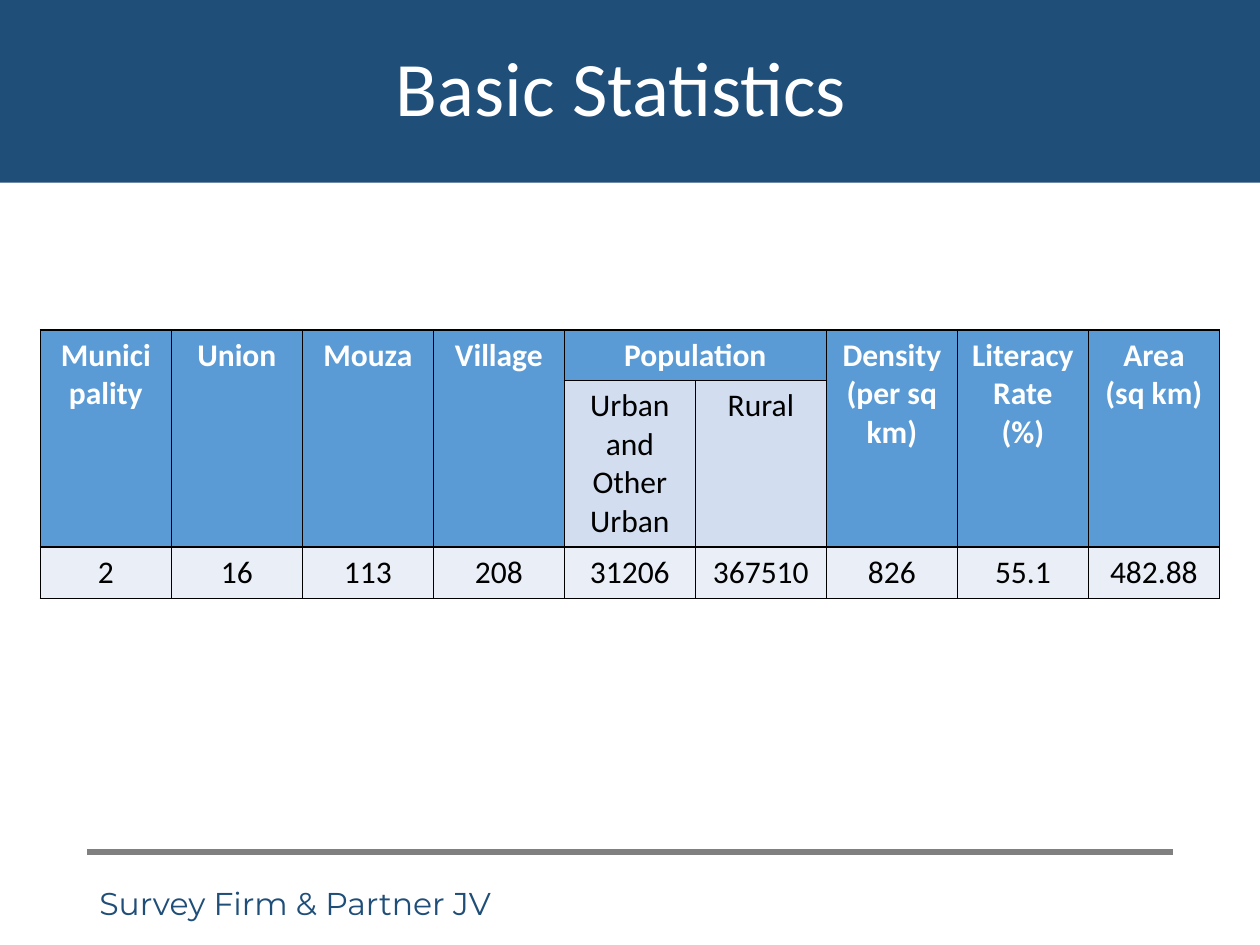
"""Build the Basic Statistics slide with its table of area figures."""
from dataclasses import dataclass

from lxml import etree
from pptx import Presentation
from pptx.dml.color import RGBColor
from pptx.enum.shapes import MSO_CONNECTOR, MSO_SHAPE
from pptx.enum.text import MSO_ANCHOR, PP_ALIGN
from pptx.oxml.ns import qn
from pptx.slide import Slide
from pptx.table import Table
from pptx.text.text import TextFrame
from pptx.util import Inches, Pt

LEFT, CENTER = PP_ALIGN.LEFT, PP_ALIGN.CENTER
MIDDLE = MSO_ANCHOR.MIDDLE
RECT = MSO_SHAPE.RECTANGLE
STRAIGHT = MSO_CONNECTOR.STRAIGHT

NAVY = RGBColor(0x1F, 0x4E, 0x79)
BLUE = RGBColor(0x5B, 0x9B, 0xD5)
PALE = RGBColor(0xD2, 0xDE, 0xEF)
MIST = RGBColor(0xEA, 0xEF, 0xF7)
GRAY = RGBColor(0x80, 0x80, 0x80)
WHITE = RGBColor(0xFF, 0xFF, 0xFF)
BLACK = RGBColor(0x00, 0x00, 0x00)

COL_WIDTH = 1.04
ROWS = (0.4, 1.32, 0.41)
SIDES = ("a:lnL", "a:lnR", "a:lnT", "a:lnB")


@dataclass(frozen=True)
class Style:
    size: float
    color: RGBColor
    font: str = "Calibri"
    bold: bool = False
    align: PP_ALIGN = CENTER


@dataclass(frozen=True)
class Field:
    head: str
    value: str
    sub: str = ""
    span: int = 1


TITLE = Style(44, WHITE)
FOOTER = Style(18, NAVY, "Montserrat", align=LEFT)
HEAD = Style(18, WHITE, bold=True)
BODY = Style(18, BLACK)

FIELDS = (
    Field("Municipality", "2"),
    Field("Union", "16"),
    Field("Mouza", "113"),
    Field("Village", "208"),
    Field("Population", "31206", "Urban and Other Urban", 2),
    Field("", "367510", "Rural"),
    Field("Density (per sq km)", "826"),
    Field("Literacy Rate (%)", "55.1"),
    Field("Area (sq km)", "482.88"),
)


def write(frame: TextFrame, text: str, style: Style) -> None:
    frame.word_wrap = True
    para = frame.paragraphs[0]
    para.alignment = style.align
    run = para.add_run()
    run.text = text
    font = run.font
    font.name, font.size, font.bold = style.font, Pt(style.size), style.bold
    font.color.rgb = style.color


def add_title(slide: Slide) -> None:
    band = slide.shapes.add_shape(RECT, 0, 0, Inches(10), Inches(1.45))
    band.shadow.inherit = False
    band.fill.solid()
    band.fill.fore_color.rgb = NAVY
    band.line.fill.background()
    frame = band.text_frame
    frame.vertical_anchor = MIDDLE
    write(frame, "Basic Statistics ", TITLE)
    frame.paragraphs[0].line_spacing = 0.9


def add_footer(slide: Slide) -> None:
    rule = slide.shapes.add_connector(
        STRAIGHT, Inches(0.69), Inches(6.76), Inches(9.31), Inches(6.76))
    rule.line.color.rgb = GRAY
    rule.line.width = Pt(3.25)
    etree.SubElement(rule._element.spPr, qn("a:effectLst"))
    box = slide.shapes.add_textbox(
        Inches(0.69), Inches(6.9), Inches(5.39), Inches(0.53))
    box.text_frame.vertical_anchor = MIDDLE
    write(box.text_frame, "Survey Firm & Partner JV", FOOTER)


def paint(table: Table, row: int, col: int, fill: RGBColor) -> None:
    cell = table.cell(row, col)
    props = cell._tc.get_or_add_tcPr()
    for side in SIDES:
        line = etree.SubElement(props, qn(side), w=str(Pt(1)))
        solid = etree.SubElement(line, qn("a:solidFill"))
        etree.SubElement(solid, qn("a:srgbClr"), val=str(BLACK))
    cell.fill.solid()
    cell.fill.fore_color.rgb = fill


def add_stats(slide: Slide) -> None:
    count = len(FIELDS)
    table = slide.shapes.add_table(
        len(ROWS), count, Inches(0.32), Inches(2.62),
        Inches(COL_WIDTH * count), Inches(sum(ROWS))).table
    for row, height in zip(table.rows, ROWS):
        row.height = Inches(height)
    for col, field in enumerate(FIELDS):
        table.columns[col].width = Inches(COL_WIDTH)
        fills = (BLUE, PALE if field.sub else BLUE, MIST)
        for row, fill in enumerate(fills):
            paint(table, row, col, fill)
        if field.head:
            top = table.cell(0, col)
            if field.span > 1:
                top.merge(table.cell(0, col + field.span - 1))
            else:
                top.merge(table.cell(1, col))
            write(top.text_frame, field.head, HEAD)
        if field.sub:
            write(table.cell(1, col).text_frame, field.sub, BODY)
        write(table.cell(2, col).text_frame, field.value, BODY)


def main() -> None:
    deck = Presentation()
    deck.slide_width, deck.slide_height = Inches(10), Inches(7.5)
    slide = deck.slides.add_slide(deck.slide_layouts[6])
    add_footer(slide)
    add_title(slide)
    add_stats(slide)
    deck.save("out.pptx")


if __name__ == "__main__":
    main()
